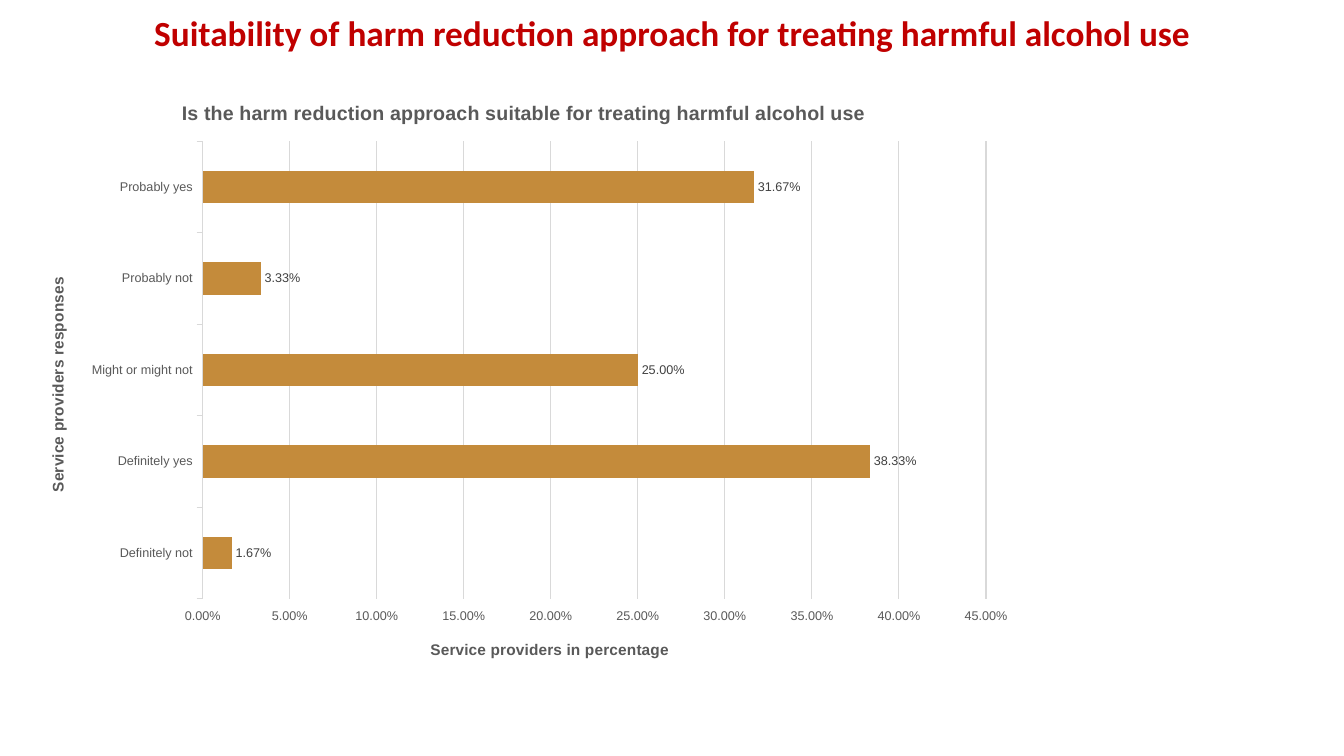
from pptx import Presentation
from pptx.chart.data import CategoryChartData
from pptx.dml.color import RGBColor
from pptx.enum.chart import XL_CHART_TYPE, XL_LABEL_POSITION, XL_TICK_MARK
from pptx.enum.text import MSO_ANCHOR, PP_ALIGN
from pptx.oxml import parse_xml
from pptx.oxml.ns import nsdecls, qn
from pptx.util import Inches, Pt

COLORS = {
    "title": "C00000",
    "Series 1": "005BAA",
    "Series 2": "C48B3B",
    "text": "595959",
    "label": "404040",
    "grid": "D9D9D9",
}
RESPONSES = {
    "Definitely not": 0.0167,
    "Definitely yes": 0.3833,
    "Might or might not": 0.25,
    "Probably not": 0.0333,
    "Probably yes": 0.3167,
}
CHART_WIDTH, CHART_HEIGHT = 9.94, 5.95


def style_font(font, name, size, color, bold=False):
    font.name = name
    font.size = Pt(size)
    font.bold = bold
    font.color.rgb = RGBColor.from_string(COLORS[color])


def place(element, position, **inches):
    for old_layout in element.findall(qn("c:layout")):
        element.remove(old_layout)
    target = '<c:layoutTarget val="inner"/>' if "w" in inches else ""
    modes = "".join(f'<c:{key}Mode val="edge"/>' for key in "xy")
    values = "".join(
        f'<c:{key} val="{length / (CHART_WIDTH if key in "xw" else CHART_HEIGHT)}"/>'
        for key, length in inches.items()
    )
    element.insert(position, parse_xml(
        f'<c:layout {nsdecls("c")}><c:manualLayout>{target}{modes}{values}'
        "</c:manualLayout></c:layout>"
    ))


presentation = Presentation()
presentation.slide_width = Inches(13.33)
presentation.slide_height = Inches(7.5)
slide = presentation.slides.add_slide(presentation.slide_layouts[5])

title = slide.shapes.title
title.left, title.top = Inches(0.92), Inches(0.11)
title.width, title.height = Inches(11.5), Inches(0.92)
title.text_frame.text = "Suitability of harm reduction approach for treating harmful alcohol use"
title.text_frame.vertical_anchor = MSO_ANCHOR.TOP
title.text_frame.word_wrap = True
paragraph = title.text_frame.paragraphs[0]
paragraph.alignment = PP_ALIGN.CENTER
paragraph.line_spacing = 0.9
style_font(paragraph.runs[0].font, "Calibri", 25.2, "title", True)

chart_data = CategoryChartData(number_format="0.00%")
chart_data.categories = list(RESPONSES)
chart_data.add_series("Series 1", [])
chart_data.add_series("Series 2", list(RESPONSES.values()))
chart = slide.shapes.add_chart(
    XL_CHART_TYPE.BAR_CLUSTERED,
    Inches(0.26), Inches(0.79), Inches(CHART_WIDTH), Inches(CHART_HEIGHT),
    chart_data,
).chart
chart.has_legend = False
chart.has_title = True
style_font(chart.font, "Arial", 10, "text")
plot_area = chart.element.find(".//" + qn("c:plotArea"))
place(plot_area, 0, x=1.75, y=0.61, w=7.77, h=4.54)

plot = chart.plots[0]
plot.gap_width = 182
plot.vary_by_categories = False
for series in plot.series:
    series.format.fill.solid()
    series.format.fill.fore_color.rgb = RGBColor.from_string(COLORS[series.name])
    labels = series.data_labels
    labels.show_value = True
    labels.position = XL_LABEL_POSITION.OUTSIDE_END
    labels.number_format = "0.00%"
    labels.number_format_is_linked = False
    style_font(labels.font, "Arial", 9, "label")
empty_series = plot_area.find(".//" + qn("c:ser"))
empty_series.remove(empty_series.find(qn("c:val")))

category_axis, value_axis = chart.category_axis, chart.value_axis
for axis in (category_axis, value_axis):
    axis.has_title = True
    axis.major_tick_mark = XL_TICK_MARK.OUTSIDE
    axis.minor_tick_mark = XL_TICK_MARK.NONE
    style_font(axis.tick_labels.font, "Arial", 9, "text")

category_axis.has_major_gridlines = False
value_axis.has_major_gridlines = True
value_axis.format.line.fill.background()
for line in (category_axis.format.line, value_axis.major_gridlines.format.line):
    line.width = Pt(0.75)
    line.color.rgb = RGBColor.from_string(COLORS["grid"])
value_axis.minimum_scale = 0
value_axis.maximum_scale = 0.45
value_axis.major_unit = 0.05
value_axis.tick_labels.number_format = "0.00%"
value_axis.tick_labels.number_format_is_linked = False

for heading, text, size, x, y in (
    (chart.chart_title, "Is the harm reduction approach suitable for treating harmful alcohol use", 14, 1.51, 0.17),
    (category_axis.axis_title, "Service providers responses", 11, 0.18, 1.93),
    (value_axis.axis_title, "Service providers in percentage", 11, 3.98, 5.52),
):
    heading.text_frame.text = text
    style_font(heading.text_frame.paragraphs[0].runs[0].font, "Arial", size, "text", True)
    place(heading.element, 1, x=x, y=y)

category_properties = category_axis.axis_title.element.find(".//" + qn("a:bodyPr"))
category_properties.set("rot", "-5400000")
category_properties.set("vert", "horz")

presentation.save("out.pptx")
